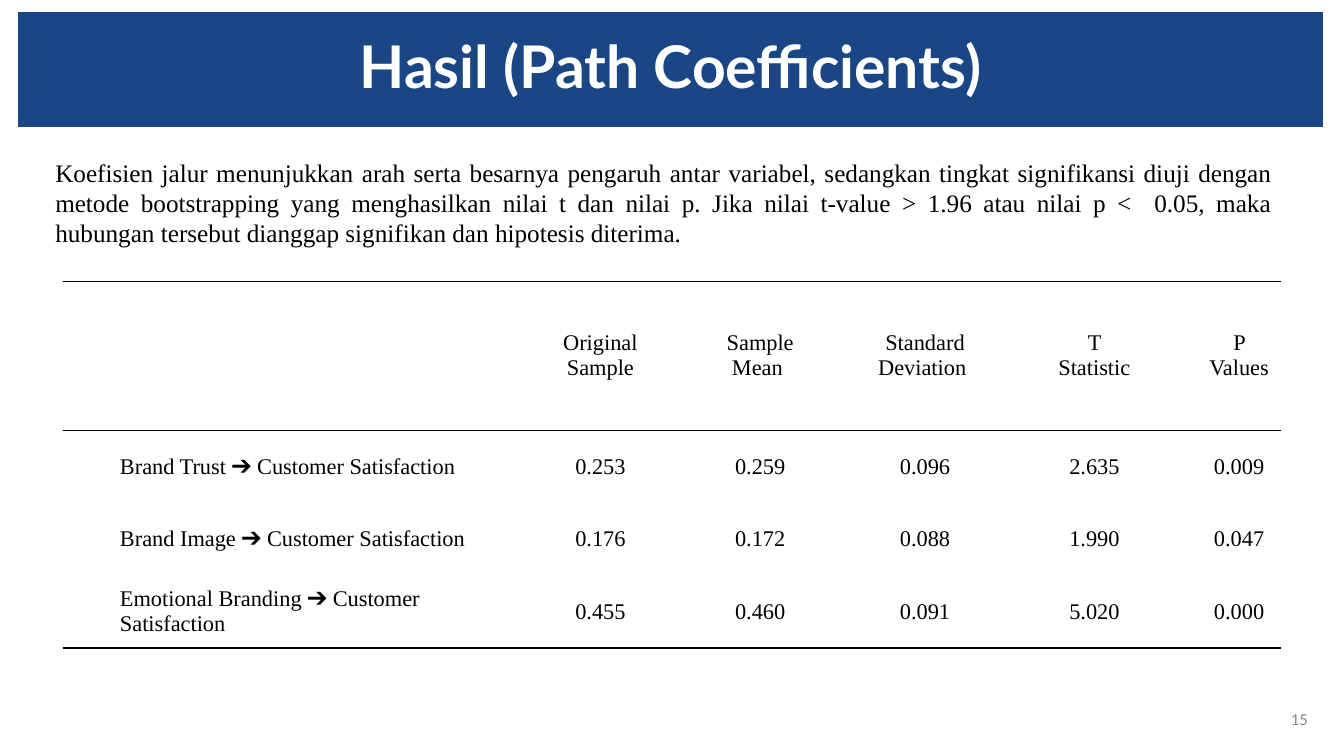
from dataclasses import dataclass

from lxml import etree
from pptx import Presentation
from pptx.dml.color import RGBColor
from pptx.enum.text import MSO_ANCHOR, MSO_AUTO_SIZE, PP_ALIGN
from pptx.oxml.ns import qn
from pptx.util import Inches, Pt

LEFT, CENTER, RIGHT, JUSTIFY = PP_ALIGN.LEFT, PP_ALIGN.CENTER, PP_ALIGN.RIGHT, PP_ALIGN.JUSTIFY
TOP, MIDDLE = MSO_ANCHOR.TOP, MSO_ANCHOR.MIDDLE
NO_AUTOFIT = MSO_AUTO_SIZE.NONE

HEADING = "Hasil (Path Coefficients)"
EXPLANATION = (
    "Koefisien jalur menunjukkan arah serta besarnya pengaruh antar variabel, "
    "sedangkan tingkat signifikansi diuji dengan metode bootstrapping yang "
    "menghasilkan nilai t dan nilai p. Jika nilai t-value > 1.96 atau nilai "
    "p <  0.05, maka hubungan tersebut dianggap signifikan dan hipotesis diterima."
)
COEFFICIENTS = [
    ("", "Original Sample", "Sample Mean ", "Standard Deviation ", "T Statistic", "P Values"),
    ("Brand Trust ➔ Customer Satisfaction", "0.253", "0.259", "0.096", "2.635", "0.009"),
    ("Brand Image ➔ Customer Satisfaction", "0.176", "0.172", "0.088", "1.990", "0.047"),
    ("Emotional Branding ➔ Customer Satisfaction", "0.455", "0.460", "0.091", "5.020", "0.000"),
]
PAGE = "15"

SLIDE = (13.33, 7.5)
BANNER = (0.18, 0.12, 12.94, 1.14)
EXPLANATION_AREA = (0.45, 1.51, 12.27, 1.01)
PAGE_AREA = (12.5, 6.93, 0.57, 0.4)
TABLE_ORIGIN = (0.62, 2.79)
COLUMNS = (4.22, 1.73, 1.44, 1.83, 1.53, 1.34)
HEADER_ROW, BODY_ROW = 1.48, 0.72
CELL_MARGIN, CELL_INDENT = 0.07, 0.5
RULED_EDGES = (0, 1, len(COEFFICIENTS))


@dataclass(frozen=True)
class Theme:
    banner: str = "1B4685"
    rule: str = "000000"
    heading: tuple = ("Lato", 42, "FFFFFF", True)
    body: tuple = ("Times New Roman", 18, "000000", False)
    cell: tuple = ("Times New Roman", 16, "000000", False)
    page: tuple = ("Calibri", 12, "888888", False)


THEME = Theme()


def write(frame, text, style, alignment):
    paragraph = frame.paragraphs[0]
    paragraph.text = text
    paragraph.alignment = alignment
    name, size, color, bold = style
    for attribute, value in {"name": name, "size": Pt(size), "bold": bold}.items():
        setattr(paragraph.font, attribute, value)
    paragraph.font.color.rgb = RGBColor.from_string(color)
    for run in paragraph.runs:
        run.font.name = name
    return paragraph


def add_text(slide, area, text, style, alignment, anchor):
    frame = slide.shapes.add_textbox(*map(Inches, area)).text_frame
    frame.word_wrap = True
    frame.vertical_anchor = anchor
    write(frame, text, style, alignment)


def add_border(properties, side, ruled):
    line = etree.SubElement(properties, qn(f"a:{side}"), w=str(Pt(1)))
    if ruled:
        fill = etree.SubElement(line, qn("a:solidFill"))
        etree.SubElement(fill, qn("a:srgbClr"), val=THEME.rule)
    else:
        etree.SubElement(line, qn("a:noFill"))


def add_banner(slide):
    banner = slide.shapes.title
    for attribute, value in zip(("left", "top", "width", "height"), BANNER):
        setattr(banner, attribute, Inches(value))
    banner.fill.solid()
    banner.fill.fore_color.rgb = RGBColor.from_string(THEME.banner)
    banner.text_frame.auto_size = NO_AUTOFIT
    banner.text_frame.vertical_anchor = MIDDLE
    write(banner.text_frame, HEADING, THEME.heading, CENTER).line_spacing = 0.9


def add_coefficients(slide):
    heights = [HEADER_ROW] + [BODY_ROW] * (len(COEFFICIENTS) - 1)
    extent = (sum(COLUMNS), sum(heights))
    graphic = slide.shapes.add_table(
        len(heights), len(COLUMNS), *map(Inches, TABLE_ORIGIN + extent))
    table = graphic.table
    table.first_row = table.horz_banding = False
    for column, width in zip(table.columns, COLUMNS):
        column.width = Inches(width)
    for row, height in zip(table.rows, heights):
        row.height = Inches(height)

    cell_elements = graphic.element.iter(qn("a:tc"))
    cell_format = {
        "vertical_anchor": MIDDLE,
        "margin_left": Inches(CELL_MARGIN),
        "margin_right": Inches(CELL_MARGIN),
        "margin_top": 0,
        "margin_bottom": 0,
    }
    for r, values in enumerate(COEFFICIENTS):
        for c, value in enumerate(values):
            cell = table.cell(r, c)
            for attribute, setting in cell_format.items():
                setattr(cell, attribute, setting)
            properties = next(cell_elements).get_or_add_tcPr()
            for side, ruled in (("lnL", False), ("lnR", False),
                                ("lnT", r in RULED_EDGES), ("lnB", r + 1 in RULED_EDGES)):
                add_border(properties, side, ruled)
            cell.fill.background()
            paragraph = write(cell.text_frame, value, THEME.cell, CENTER if c else LEFT)
            paragraph._p.get_or_add_pPr().set("marL", str(Inches(CELL_INDENT)))


def main():
    deck = Presentation()
    deck.slide_width, deck.slide_height = map(Inches, SLIDE)
    slide = deck.slides.add_slide(deck.slide_layouts[5])
    add_banner(slide)
    add_coefficients(slide)
    add_text(slide, EXPLANATION_AREA, EXPLANATION, THEME.body, JUSTIFY, TOP)
    add_text(slide, PAGE_AREA, PAGE, THEME.page, RIGHT, MIDDLE)
    deck.save("out.pptx")


if __name__ == "__main__":
    main()
